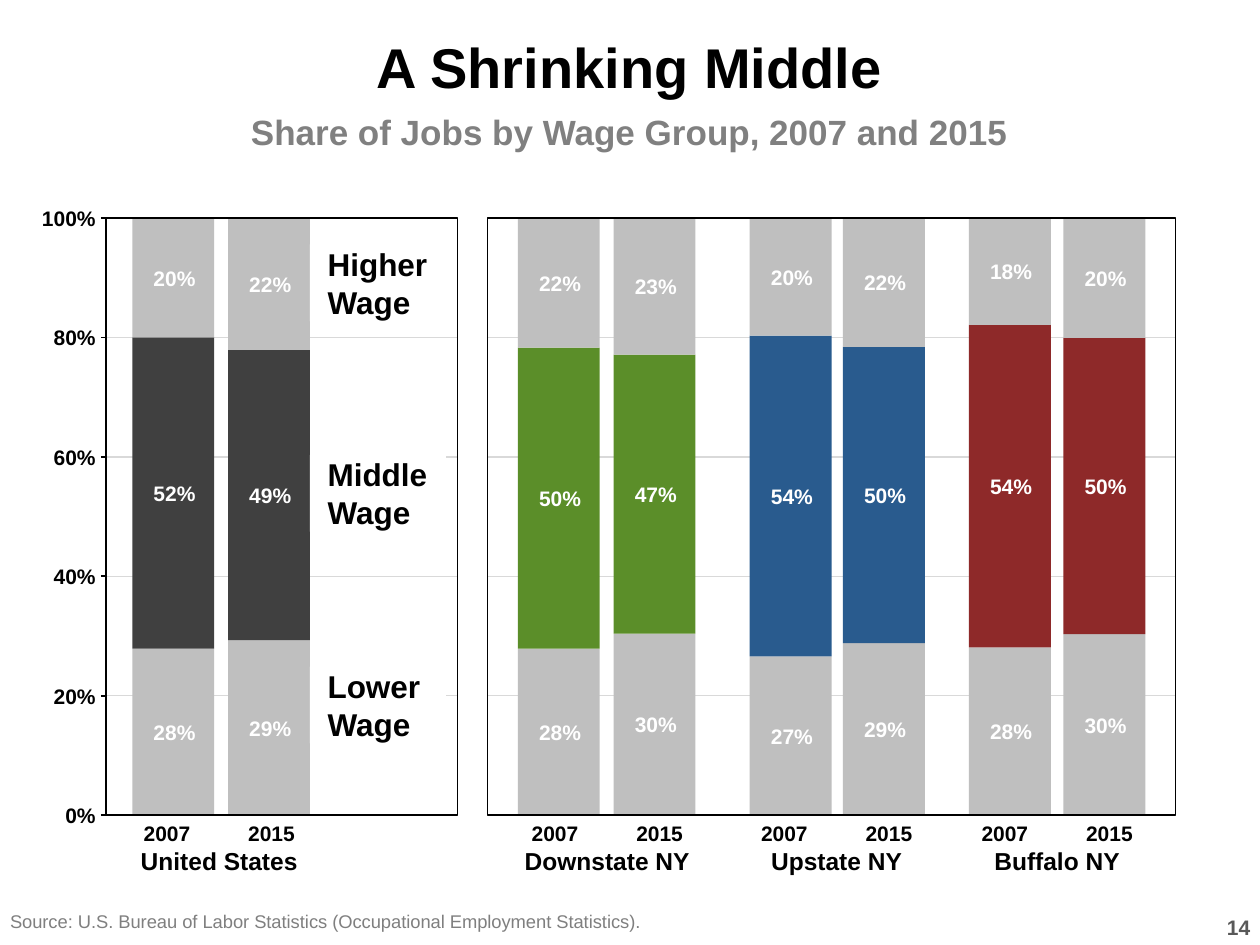
from lxml.etree import SubElement
from pptx import Presentation
from pptx.dml.color import RGBColor
from pptx.enum.shapes import MSO_CONNECTOR, MSO_SHAPE
from pptx.enum.text import MSO_ANCHOR, MSO_AUTO_SIZE, PP_ALIGN
from pptx.oxml.ns import qn
from pptx.util import Inches, Pt

BLACK, WHITE, GRID, PALE = "000000", "FFFFFF", "D9D9D9", "BFBFBF"
PLOT_TOP, PLOT_HEIGHT = 1.73, 4.74
BAR_WIDTH = 0.65
PANELS = [(0.84, 2.79), (3.87, 5.46)]  # left, width

# name, colour of the middle group, left of the labels,
# then left, lower share and middle share of the 2007 and 2015 bars
REGIONS = [
    ("United States", "404040", 0.99, [(1.05, 27.9, 52.1), (1.81, 29.3, 48.6)]),
    ("Downstate NY", "5B8E29", 4.07, [(4.11, 27.9, 50.4), (4.87, 30.4, 46.7)]),
    ("Upstate NY", "295B8E", 5.89, [(5.95, 26.6, 53.7), (6.69, 28.8, 49.6)]),
    ("Buffalo NY", "8E2929", 7.64, [(7.69, 28.1, 54.0), (8.44, 30.3, 49.6)]),
]
WAGE_GROUPS = [("Higher", 1.94), ("Middle", 3.61), ("Lower", 5.29)]


def colour(value):
    return RGBColor.from_string(value)


def height_at(share):
    """Vertical place of a percentage on the axis, in inches."""
    return PLOT_TOP + PLOT_HEIGHT * (1 - share / 100)


def format_paragraph(paragraph, text, size, shade, bold=True, align=PP_ALIGN.LEFT):
    paragraph.text = text
    paragraph.alignment = align
    values = {"name": "Arial", "size": Pt(size), "bold": bold}
    for span in paragraph.runs:
        for key, value in values.items():
            setattr(span.font, key, value)
        span.font.color.rgb = colour(shade)


def set_frame(frame, inset=0, wrap=True, anchor=MSO_ANCHOR.MIDDLE):
    values = {
        "margin_left": Inches(inset), "margin_right": 0,
        "margin_top": 0, "margin_bottom": 0,
        "word_wrap": wrap, "vertical_anchor": anchor,
        "auto_size": MSO_AUTO_SIZE.NONE,
    }
    for key, value in values.items():
        setattr(frame, key, value)


def add_label(page, text, place, size=12, shade=BLACK, inset=0, **style):
    box = page.shapes.add_textbox(*map(Inches, place))
    set_frame(box.text_frame, inset)
    format_paragraph(box.text_frame.paragraphs[0], text, size, shade, **style)
    return box


def add_rectangle(page, place, fill=None, line=None):
    box = page.shapes.add_shape(MSO_SHAPE.RECTANGLE, *map(Inches, place))
    box.shadow.inherit = False
    if fill:
        box.fill.solid()
        box.fill.fore_color.rgb = colour(fill)
    else:
        box.fill.background()
    if line:
        box.line.color.rgb = colour(line)
        box.line.width = Pt(1)
    else:
        box.line.fill.background()
    return box


def add_level_line(page, left, right, top, shade, width):
    line = page.shapes.add_connector(
        MSO_CONNECTOR.STRAIGHT, Inches(left), Inches(top), Inches(right), Inches(top))
    line.line.color.rgb = colour(shade)
    line.line.width = Pt(width)
    SubElement(line._element.spPr, qn("a:effectLst"))


def add_title(page):
    title = page.shapes.title
    title.left, title.top = Inches(0.08), Inches(0.26)
    title.width, title.height = Inches(9.83), Inches(1.03)
    frame = title.text_frame
    set_frame(frame, anchor=MSO_ANCHOR.TOP)
    format_paragraph(frame.paragraphs[0], "A Shrinking Middle", 32, BLACK,
                     align=PP_ALIGN.CENTER)
    subtitle = frame.add_paragraph()
    format_paragraph(subtitle, "Share of Jobs by Wage Group, 2007 and 2015", 20,
                     "808080", align=PP_ALIGN.CENTER)
    subtitle.space_before = Pt(6)


def add_gridlines(page):
    for left, width in PANELS:
        for share in range(20, 100, 20):
            add_level_line(page, left, left + width, height_at(share), GRID, 0.75)


def add_axis(page):
    for share in range(0, 101, 20):
        top = height_at(share)
        add_level_line(page, 0.8, 0.84, top, BLACK, 1)
        add_label(page, f"{share}%", (0.33, top - 0.1, 0.43, 0.2), align=PP_ALIGN.RIGHT)


def add_bar(page, left, lower, middle, accent):
    """Stack the lower, middle and higher shares, each with its label."""
    base = 0
    shares = [lower, middle, 100 - lower - middle]
    for share, fill in zip(shares, [PALE, accent, PALE]):
        top, bottom = height_at(base + share), height_at(base)
        add_rectangle(page, (left, top, BAR_WIDTH, bottom - top), fill)
        label_top = (top + bottom) / 2 - 0.1
        add_label(page, f"{share:.0f}%", (left + 0.12, label_top, 0.43, 0.2),
                  shade=WHITE, align=PP_ALIGN.CENTER)
        base += share


def add_region_labels(page, name, left):
    years = add_label(page, "2007\t2015", (left, 6.51, 1.5, 0.2), inset=0.15)
    properties = years.text_frame.paragraphs[0]._p.get_or_add_pPr()
    tabs = SubElement(properties, qn("a:tabLst"))
    SubElement(tabs, qn("a:tab"), pos=str(Inches(0.83)), algn="l")
    add_label(page, name, (left, 6.71, 1.5, 0.24), size=14, align=PP_ALIGN.CENTER)


def add_wage_label(page, name, top):
    box = add_rectangle(page, (2.46, top, 1.08, 0.61), WHITE)
    set_frame(box.text_frame, inset=0.14, wrap=False)
    format_paragraph(box.text_frame.paragraphs[0], f"{name}\vWage", 18, BLACK)


def main():
    deck = Presentation()
    deck.slide_width, deck.slide_height = Inches(10), Inches(7.5)
    page = deck.slides.add_slide(deck.slide_layouts[5])

    add_gridlines(page)
    add_title(page)
    for name, accent, label_left, bars in REGIONS:
        for left, lower, middle in bars:
            add_bar(page, left, lower, middle, accent)
        add_region_labels(page, name, label_left)
    add_axis(page)
    for left, width in PANELS:
        add_rectangle(page, (left, PLOT_TOP, width, PLOT_HEIGHT), line=BLACK)
    for name, top in WAGE_GROUPS:
        add_wage_label(page, name, top)

    add_label(page, "Source: U.S. Bureau of Labor Statistics "
              "(Occupational Employment Statistics).",
              (0.08, 7.2, 7.66, 0.23), size=10.5, shade="7F7F7F", bold=False)
    add_label(page, "14", (9.68, 7.24, 0.3, 0.23), shade="595959",
              align=PP_ALIGN.CENTER)
    deck.save("out.pptx")


if __name__ == "__main__":
    main()
